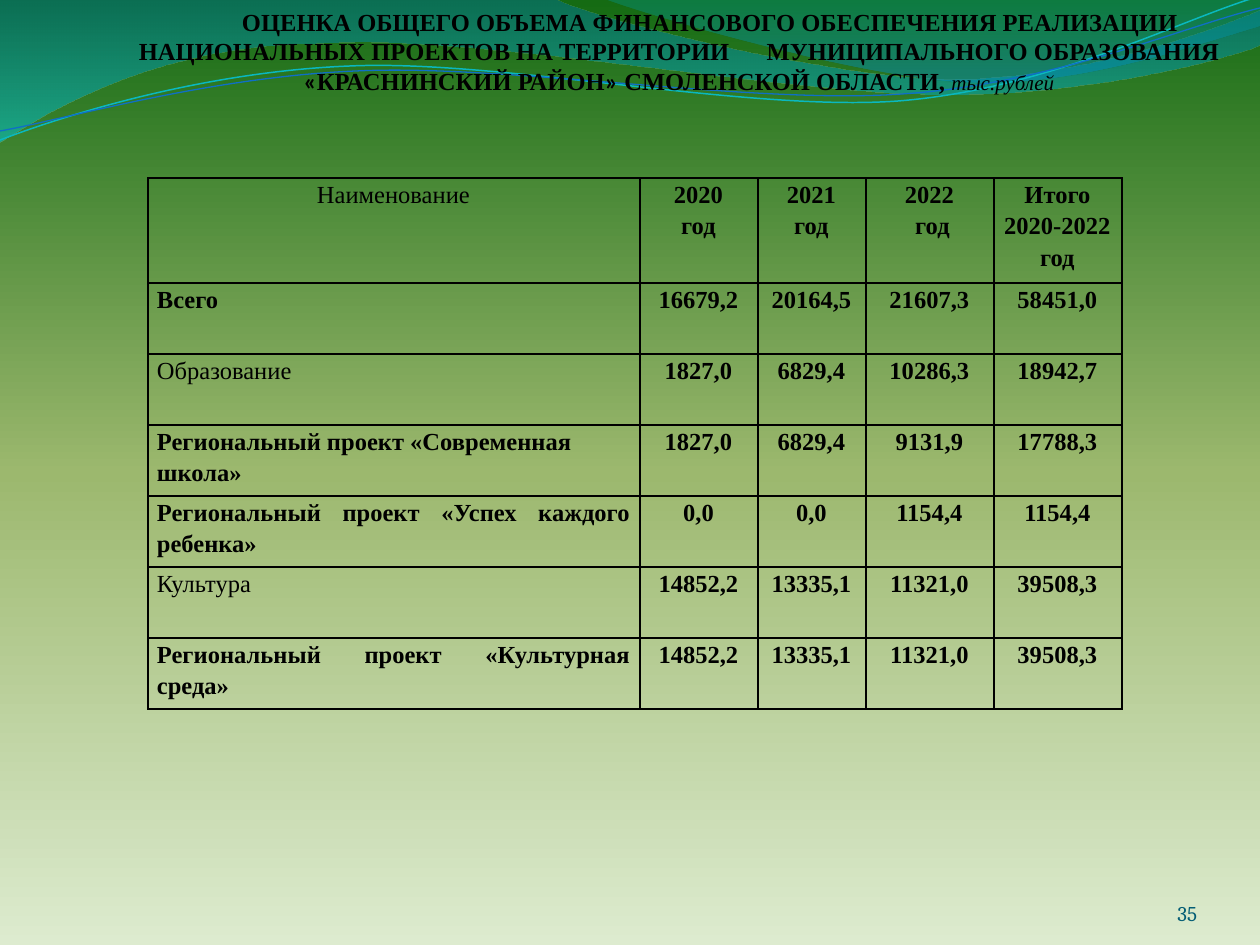
"""Build the slide on national project funding in the Krasninsky district."""
from dataclasses import dataclass

import lxml.etree
import pptx
import pptx.dml.color
import pptx.enum.text
import pptx.oxml.ns
import pptx.util

RGB = pptx.dml.color.RGBColor
ALIGN = pptx.enum.text.PP_ALIGN
ANCHOR = pptx.enum.text.MSO_ANCHOR
qn = pptx.oxml.ns.qn

EMU_PER_PX = 914400 / 126
SERIF = "Times New Roman"

BLACK = RGB(0x00, 0x00, 0x00)
PAGE_BLUE = RGB(0x04, 0x5D, 0x75)
PALE_GREEN = RGB(0xDD, 0xEB, 0xCF)
MID_GREEN = RGB(0x9C, 0xB8, 0x6E)
DARK_GREEN = RGB(0x15, 0x6B, 0x13)
DEEP_BLUE = RGB(0x00, 0x74, 0xA1)
AQUA = RGB(0x00, 0xC6, 0xCF)
TEAL = RGB(0x00, 0xA1, 0xA9)
SKY = RGB(0x00, 0x8B, 0xBF)
CYAN_LINE = RGB(0x0A, 0xB8, 0xBF)
BLUE_LINE = RGB(0x0F, 0x6F, 0xC6)


@dataclass(frozen=True)
class Stop:
    position: int
    color: RGB
    opacity: int = 100


@dataclass(frozen=True)
class Wave:
    """Outline whose segments are a line (one point) or a cubic curve (three)."""
    start: tuple
    segments: tuple
    stops: tuple = ()
    line_color: RGB = None
    line_width: float = 0


@dataclass(frozen=True)
class Row:
    name: str
    values: tuple
    bold: bool = True
    align: ALIGN = ALIGN.JUSTIFY


@dataclass(frozen=True)
class TextRun:
    text: str
    font: str = SERIF
    size: int = 14
    bold: bool = True
    italic: bool = False
    color: RGB = BLACK
    spacing: int = 0


WAVES = (
    Wave((0, -1), (
        ((554, -1),),
        ((600, 21), (837, 79), (955, 79)),
        ((1074, 79), (1207, 33), (1260, 11)),
        ((1261, 45),),
        ((1239, 55), (1096, 96), (940, 94)),
        ((784, 94), (481, 35), (324, 43)),
        ((163, 44), (58, 105), (-1, 142)),
    ), stops=(Stop(0, DEEP_BLUE, 45), Stop(100, AQUA, 55))),
    Wave((604, -1), (
        ((641, 14), (859, 78), (969, 82)),
        ((1079, 87), (1211, 40), (1260, 26)),
        ((1260, 0),),
    ), stops=(Stop(0, TEAL, 30), Stop(80, SKY, 45))),
    Wave((0, 140), (
        ((60, 117), (199, 72), (349, 66)),
        ((498, 59), (747, 112), (898, 101)),
        ((1050, 89), (1182, 19), (1257, -3)),
    ), line_color=CYAN_LINE, line_width=0.85),
    Wave((0, 131), (
        ((59, 121), (207, 77), (357, 71)),
        ((508, 64), (752, 105), (903, 94)),
        ((1053, 84), (1185, 26), (1260, 8)),
    ), line_color=BLUE_LINE, line_width=0.75),
)

TITLE = (
    TextRun("ОЦЕНКА ОБЩЕГО ОБЪЕМА ФИНАНСОВОГО ОБЕСПЕЧЕНИЯ РЕАЛИЗАЦИИ "
            "НАЦИОНАЛЬНЫХ ПРОЕКТОВ НА ТЕРРИТОРИИ"),
    TextRun(" ", spacing=1750),
    TextRun("МУНИЦИПАЛЬНОГО ОБРАЗОВАНИЯ "),
    TextRun("«", font="Calibri"),
    TextRun("КРАСНИНСКИЙ РАЙОН"),
    TextRun("»", font="Calibri"),
    TextRun(" СМОЛЕНСКОЙ ОБЛАСТИ, "),
    TextRun("тыс.рублей", size=12, bold=False, italic=True),
)

COLUMN_WIDTHS = (492, 118, 108, 128, 128)
HEADER_HEIGHT, ROW_HEIGHT = 105, 71
CULTURE = ("14852,2", "13335,1", "11321,0", "39508,3")
ROWS = (
    Row("Наименование", ("2020\nгод", "2021 год", "2022\n год", "Итого 2020-2022 год"),
        bold=False, align=ALIGN.CENTER),
    Row("Всего", ("16679,2", "20164,5", "21607,3", "58451,0")),
    Row("Образование", ("1827,0", "6829,4", "10286,3", "18942,7"), bold=False),
    Row("Региональный проект «Современная школа»",
        ("1827,0", "6829,4", "9131,9", "17788,3"), align=ALIGN.LEFT),
    Row("Региональный проект «Успех каждого ребенка»", ("0,0", "0,0", "1154,4", "1154,4")),
    Row("Культура", CULTURE, bold=False),
    Row("Региональный проект «Культурная среда»", CULTURE),
)


def px(length: float) -> int:
    return round(length * EMU_PER_PX)


def set_gradient(fill, root, stops: tuple, angle: int) -> None:
    fill.gradient()
    fill.gradient_angle = angle
    gs_list = root.find(".//" + qn("a:gsLst"))
    for old in list(gs_list):
        gs_list.remove(old)
    for stop in stops:
        gs = lxml.etree.SubElement(gs_list, qn("a:gs"), pos=str(stop.position * 1000))
        clr = lxml.etree.SubElement(gs, qn("a:srgbClr"), val=str(stop.color))
        if stop.opacity < 100:
            lxml.etree.SubElement(clr, qn("a:alpha"), val=str(stop.opacity * 1000))


def bend_segments(sp, segments: tuple) -> None:
    lines = iter(sp._element.findall(".//" + qn("a:lnTo")))
    for segment in segments:
        first, *others = [next(lines) for _ in segment]
        if others:
            first.tag = qn("a:cubicBezTo")
            for line in others:
                first.append(line[0])
                line.getparent().remove(line)


def draw_wave(s, wave: Wave) -> None:
    builder = s.shapes.build_freeform(*map(px, wave.start))
    builder.add_line_segments([(px(x), px(y)) for segment in wave.segments for x, y in segment],
                              close=bool(wave.stops))
    sp = builder.convert_to_shape()
    bend_segments(sp, wave.segments)
    sp.shadow.inherit = False
    if wave.stops:
        set_gradient(sp.fill, sp._element, wave.stops, 270)
        sp.line.fill.background()
    else:
        sp.fill.background()
        sp.line.color.rgb = wave.line_color
        sp.line.width = pptx.util.Pt(wave.line_width)


def add_run(p, run: TextRun) -> None:
    r = p.add_run()
    r.text = run.text
    r.font.name, r.font.size = run.font, pptx.util.Pt(run.size)
    r.font.bold, r.font.italic = run.bold, run.italic
    r.font.color.rgb = run.color
    if run.spacing:
        r._r.get_or_add_rPr().set("spc", str(run.spacing))


def draw_text(s, box: tuple, insets: tuple, runs: tuple, align: ALIGN, anchor: ANCHOR):
    tf = s.shapes.add_textbox(*map(px, box)).text_frame
    tf.word_wrap = True
    tf.vertical_anchor = anchor
    tf.margin_left, tf.margin_top, tf.margin_right, tf.margin_bottom = map(px, insets)
    p = tf.paragraphs[0]
    p.alignment = align
    for run in runs:
        add_run(p, run)
    return p


def fill_cell(cell, text: str, bold: bool, align: ALIGN) -> None:
    cell.margin_left, cell.margin_right = px(9), px(10)
    cell.margin_top = cell.margin_bottom = 0
    tc_pr = cell._tc.get_or_add_tcPr()
    for side in ("a:lnL", "a:lnR", "a:lnT", "a:lnB"):
        ln = lxml.etree.SubElement(tc_pr, qn(side), w=str(pptx.util.Pt(1)))
        solid = lxml.etree.SubElement(ln, qn("a:solidFill"))
        lxml.etree.SubElement(solid, qn("a:srgbClr"), val=str(BLACK))
    cell.fill.background()
    tf = cell.text_frame
    for i, line in enumerate(text.split("\n")):
        p = tf.add_paragraph() if i else tf.paragraphs[0]
        p.alignment, p.line_spacing = align, 1.15
        add_run(p, TextRun(line, bold=bold))


def draw_table(s, left: int, top: int) -> None:
    heights = (HEADER_HEIGHT,) + (ROW_HEIGHT,) * (len(ROWS) - 1)
    table = s.shapes.add_table(len(ROWS), len(COLUMN_WIDTHS), px(left), px(top),
                               px(sum(COLUMN_WIDTHS)), px(sum(heights))).table
    table.first_row = table.horz_banding = False
    for column, width in zip(table.columns, COLUMN_WIDTHS):
        column.width = px(width)
    for table_row, height, row in zip(table.rows, heights, ROWS):
        table_row.height = px(height)
        name_cell, *value_cells = table_row.cells
        fill_cell(name_cell, row.name, row.bold, row.align)
        for cell, value in zip(value_cells, row.values):
            fill_cell(cell, value, True, ALIGN.CENTER)


def main() -> None:
    prs = pptx.Presentation()
    prs.slide_width, prs.slide_height = px(1260), px(945)
    s = prs.slides.add_slide(prs.slide_layouts[6])
    set_gradient(s.background.fill, s._element,
                 (Stop(0, PALE_GREEN), Stop(50, MID_GREEN), Stop(100, DARK_GREEN)), 90)
    for wave in WAVES:
        draw_wave(s, wave)
    page = TextRun("35", font="Cambria", size=12, bold=False, color=PAGE_BLUE)
    draw_text(s, (1092, 876, 105, 50), (0, 0, 0, 0), (page,), ALIGN.RIGHT, ANCHOR.BOTTOM)
    draw_table(s, 148, 178)
    p = draw_text(s, (98, 0, 1162, 155), (13, 7, 13, 6), TITLE, ALIGN.CENTER, ANCHOR.TOP)
    p._p.get_or_add_pPr().set("indent", str(px(62)))
    prs.save("out.pptx")


if __name__ == "__main__":
    main()
